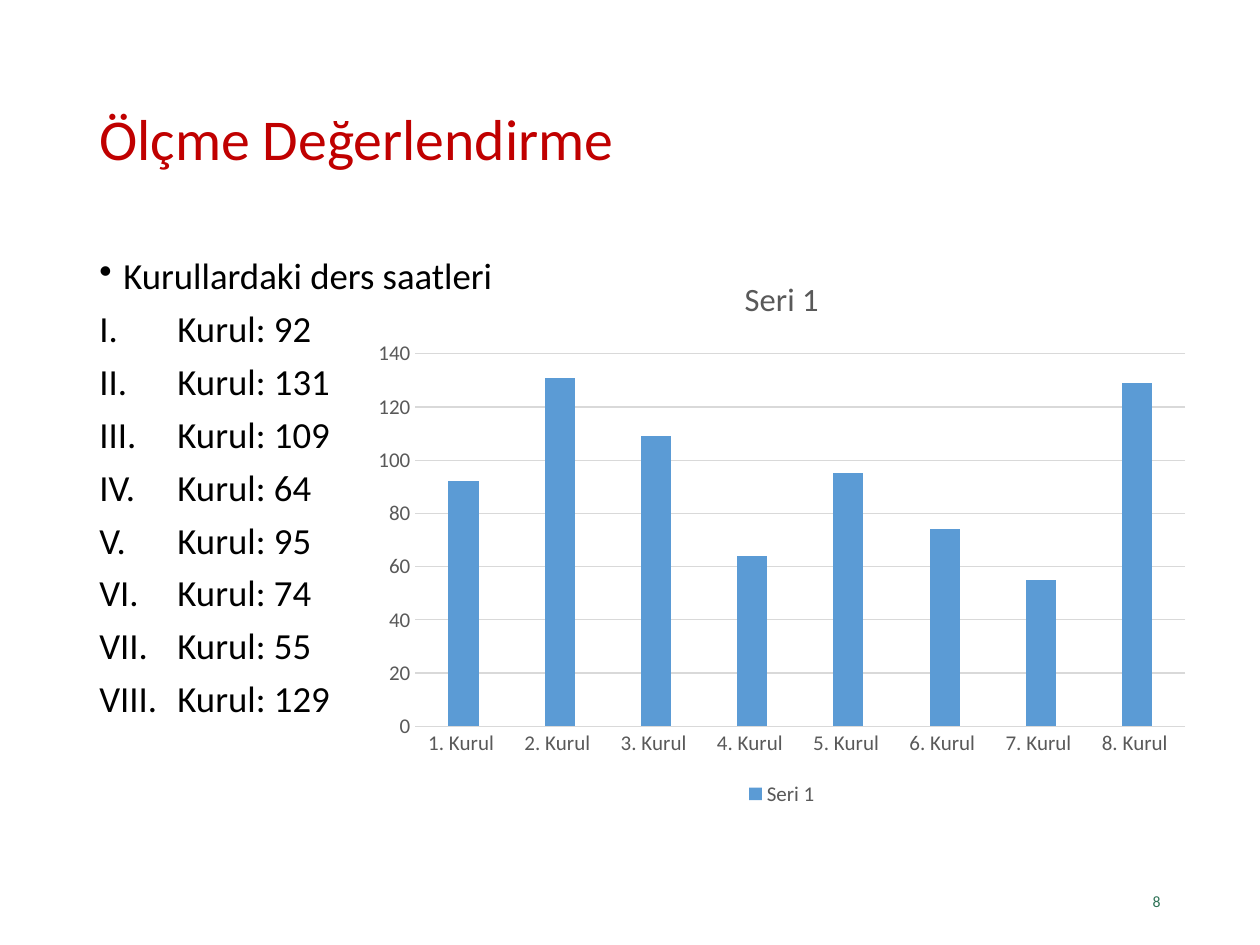
from lxml import etree
from pptx import Presentation
from pptx.chart.data import CategoryChartData
from pptx.dml.color import RGBColor
from pptx.enum.chart import XL_CHART_TYPE, XL_LEGEND_POSITION, XL_TICK_MARK
from pptx.enum.text import MSO_ANCHOR, PP_ALIGN
from pptx.oxml.ns import qn
from pptx.util import Inches, Pt

COLUMN = XL_CHART_TYPE.COLUMN_CLUSTERED
LEGEND_BOTTOM = XL_LEGEND_POSITION.BOTTOM
NO_TICK = XL_TICK_MARK.NONE
MIDDLE, TOP = MSO_ANCHOR.MIDDLE, MSO_ANCHOR.TOP
LEFT, RIGHT = PP_ALIGN.LEFT, PP_ALIGN.RIGHT

WIDTH, HEIGHT = 10, 7.5
MARGIN = 0.69
CONTENT_WIDTH = WIDTH - 2 * MARGIN
BODY_TOP = 2
FONT = "Calibri"
COLORS = {
    "title": "C00000",
    "body": "000000",
    "number": "2F7357",
    "label": "595959",
    "grid": "D9D9D9",
    "bar": "5B9BD5",
}
SERIES = "Seri 1"
HOURS = [92, 131, 109, 64, 95, 74, 55, 129]


def color(name):
    return RGBColor.from_string(COLORS[name])


def style_font(font, size, color_name):
    formats = {"name": FONT, "size": Pt(size), "bold": False}
    for attribute, value in formats.items():
        setattr(font, attribute, value)
    font.color.rgb = color(color_name)


def style_line(line, color_name):
    line.color.rgb = color(color_name)
    line.width = Pt(0.75)


def add_box(page, left, top, width, height, anchor):
    box = page.shapes.add_textbox(*map(Inches, (left, top, width, height)))
    frame = box.text_frame
    frame.word_wrap = True
    frame.vertical_anchor = anchor
    return frame


def fill_para(para, text, size, color_name, **formats):
    for attribute, value in formats.items():
        setattr(para, attribute, value)
    span = para.add_run()
    span.text = text
    style_font(span.font, size, color_name)


def add_bullet(para, indent, tag, **attributes):
    properties = para._p.get_or_add_pPr()
    properties.set("marL", str(Inches(indent)))
    properties.set("indent", str(-Inches(indent)))
    etree.SubElement(properties, qn(tag), attributes)


def add_hours_list(page):
    frame = add_box(page, MARGIN, BODY_TOP, CONTENT_WIDTH, 4.76, TOP)
    heading = frame.paragraphs[0]
    add_bullet(heading, 0.19, "a:buChar", char="•")
    fill_para(heading, "Kurullardaki ders saatleri", 21, "body", line_spacing=0.9)
    for hours in HOURS:
        para = frame.add_paragraph()
        add_bullet(para, 0.62, "a:buAutoNum", type="romanUcPeriod")
        fill_para(para, f"Kurul: {hours}", 21, "body",
                  line_spacing=0.9, space_before=Pt(7.5))


def style_axis(axis):
    formats = {"major_tick_mark": NO_TICK, "minor_tick_mark": NO_TICK}
    for attribute, value in formats.items():
        setattr(axis, attribute, value)
    style_font(axis.tick_labels.font, 12, "label")


def add_hours_chart(page):
    data = CategoryChartData()
    data.categories = [f"{number}. Kurul " for number in range(1, len(HOURS) + 1)]
    data.add_series(SERIES, HOURS)
    place = map(Inches, (2.87, BODY_TOP, 6.67, 4.44))
    chart = page.shapes.add_chart(COLUMN, *place, data).chart
    style_font(chart.font, 10, "body")

    chart.has_title = True
    chart.chart_title.include_in_layout = False
    fill_para(chart.chart_title.text_frame.paragraphs[0], SERIES, 18.6, "label")

    chart.has_legend = True
    chart.legend.position = LEGEND_BOTTOM
    chart.legend.include_in_layout = False
    style_font(chart.legend.font, 12, "label")

    for axis in (chart.category_axis, chart.value_axis):
        style_axis(axis)
    style_line(chart.category_axis.format.line, "grid")
    chart.value_axis.format.line.fill.background()
    style_line(chart.value_axis.major_gridlines.format.line, "grid")

    plot = chart.plots[0]
    formats = {"gap_width": 219, "overlap": -27, "vary_by_categories": False}
    for attribute, value in formats.items():
        setattr(plot, attribute, value)
    bars = plot.series[0].format.fill
    bars.solid()
    bars.fore_color.rgb = color("bar")


def main():
    deck = Presentation()
    deck.slide_width, deck.slide_height = Inches(WIDTH), Inches(HEIGHT)
    page = deck.slides.add_slide(deck.slide_layouts[6])

    title = add_box(page, MARGIN, 0.4, CONTENT_WIDTH, 1.45, MIDDLE)
    fill_para(title.paragraphs[0], "Ölçme Değerlendirme", 33, "title",
              line_spacing=0.9, alignment=LEFT)
    add_hours_list(page)
    number = add_box(page, WIDTH - MARGIN - 2.25, 6.95, 2.25, 0.4, MIDDLE)
    fill_para(number.paragraphs[0], "8", 9, "number", alignment=RIGHT)
    add_hours_chart(page)
    deck.save("out.pptx")


if __name__ == "__main__":
    main()
